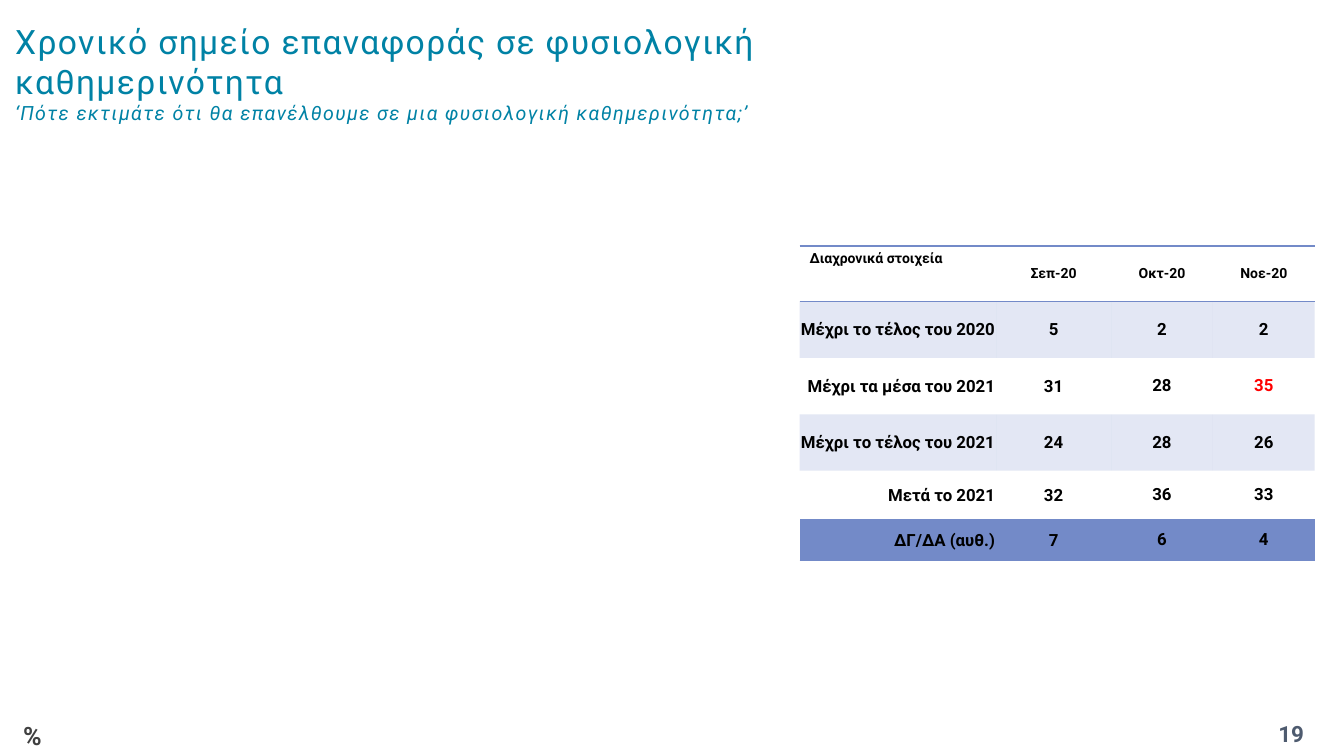
from lxml.etree import SubElement
from pptx import Presentation
from pptx.dml.color import RGBColor
from pptx.enum.dml import MSO_PATTERN
from pptx.enum.text import MSO_ANCHOR, PP_ALIGN
from pptx.oxml.ns import qn
from pptx.util import Inches, Pt

FONT = "Roboto"
TEAL = "0082A5"
SLATE = "4E5B6F"
BLUE = "738AC8"
BLACK = "000000"
RED = "FF0000"
NO_STYLE = "{2D5ABB26-0587-4C30-8999-92F81FD0307C}"

MONTHS = ["Διαχρονικά στοιχεία", "Σεπ-20", "Οκτ-20", "Νοε-20"]
ANSWERS = [
    ("Μέχρι το τέλος του 2020", 5, 2, 2),
    ("Μέχρι τα μέσα του 2021", 31, 28, 35),
    ("Μέχρι το τέλος του 2021", 24, 28, 26),
    ("Μετά το 2021", 32, 36, 33),
    ("ΔΓ/ΔΑ (αυθ.)", 7, 6, 4),
]
COLUMN_WIDTHS = [1.95, 1.14, 1.01, 1.01]
ROW_HEIGHTS = [0.55, 0.56, 0.56, 0.56, 0.48, 0.41]
HIGHLIGHT = (2, 3)


def rgb(value):
    return RGBColor.from_string(value)


class SlideBuilder:
    def __init__(self, page):
        self.page = page

    def span(self, para, text, size, color=None, spacing=None, **formats):
        span = para.add_run()
        span.text = text
        for name, value in {"name": FONT, "size": Pt(size), **formats}.items():
            setattr(span.font, name, value)
        if color:
            span.font.color.rgb = rgb(color)
        if spacing:
            span.font._element.set("spc", str(spacing))
        return span

    def title(self, heading, question):
        box = self.page.shapes.title
        place = {"left": 0.05, "top": 0.13, "width": 10.08, "height": 1.18}
        for name, value in place.items():
            setattr(box, name, Inches(value))
        frame = box.text_frame
        frame.word_wrap = True
        frame.vertical_anchor = MSO_ANCHOR.MIDDLE
        para = frame.paragraphs[0]
        para.alignment = PP_ALIGN.LEFT
        self.span(para, heading, 24, TEAL, spacing=100)
        para.add_line_break()
        self.span(para, question, 14, TEAL, spacing=100, italic=True)

    def label(self, text, left, width, size, color=None, align=PP_ALIGN.LEFT):
        box = self.page.shapes.add_textbox(
            Inches(left), Inches(7.1), Inches(width), Inches(0.4))
        box.text_frame.word_wrap = True
        para = box.text_frame.paragraphs[0]
        para.alignment = align
        return self.span(para, text, size, color, bold=True)

    def hatch(self, span, fore, back):
        fill = span.font.fill
        fill.patterned()
        fill.pattern = MSO_PATTERN.DARK_UPWARD_DIAGONAL
        fill.fore_color.rgb = rgb(fore)
        fill.back_color.rgb = rgb(back)

    def border(self, cell, side):
        line = SubElement(cell._tc.get_or_add_tcPr(), qn(f"a:{side}"), w=str(Pt(1)))
        fill = SubElement(line, qn("a:solidFill"))
        SubElement(fill, qn("a:srgbClr"), val=BLUE)

    def band(self, cell):
        """Fill the cell with the translucent band colour."""
        cell.fill.solid()
        cell.fill.fore_color.rgb = rgb(BLUE)
        color = cell._tc.tcPr.find(f".//{qn('a:solidFill')}/{qn('a:srgbClr')}")
        SubElement(color, qn("a:alpha"), val="20000")

    def cell(self, cell, text, row, column):
        header = row == 0
        corner = header and column == 0
        cell.vertical_anchor = MSO_ANCHOR.TOP if corner else MSO_ANCHOR.MIDDLE
        if not header and column < 2:
            margins = {"left": 0.01, "right": 0.01, "top": 0.01, "bottom": 0}
            for side, value in margins.items():
                setattr(cell, f"margin_{side}", Inches(value))
        para = cell.text_frame.paragraphs[0]
        if corner:
            para.alignment = PP_ALIGN.LEFT
        else:
            para.alignment = PP_ALIGN.CENTER if column else PP_ALIGN.RIGHT
        color = RED if (row, column) == HIGHLIGHT else BLACK
        self.span(para, str(text), 10 if header else 12, color, bold=True)
        if row % 2:
            self.band(cell)
        else:
            cell.fill.background()

    def table(self, rows, left, top):
        frame = self.page.shapes.add_table(
            len(rows), len(COLUMN_WIDTHS), Inches(left), Inches(top),
            Inches(sum(COLUMN_WIDTHS)), Inches(sum(ROW_HEIGHTS)))
        table = frame.table
        table.first_row = True
        table.horz_banding = False
        table._tbl.tblPr.find(qn("a:tableStyleId")).text = NO_STYLE
        for column, width in zip(table.columns, COLUMN_WIDTHS):
            column.width = Inches(width)
        for row, height in zip(table.rows, ROW_HEIGHTS):
            row.height = Inches(height)
        edges = {0: ["lnT", "lnB"], len(rows) - 1: ["lnB"]}
        for row, values in enumerate(rows):
            for column, value in enumerate(values):
                cell = table.cell(row, column)
                for side in edges.get(row, []):
                    self.border(cell, side)
                self.cell(cell, value, row, column)


def main():
    deck = Presentation()
    deck.slide_width = Inches(13.33)
    deck.slide_height = Inches(7.5)
    builder = SlideBuilder(deck.slides.add_slide(deck.slide_layouts[5]))
    builder.title(
        "Χρονικό σημείο επαναφοράς σε φυσιολογική καθημερινότητα",
        "‘Πότε εκτιμάτε ότι θα επανέλθουμε σε μια φυσιολογική καθημερινότητα;’")
    builder.label("19", 12.28, 1.05, 16, SLATE, PP_ALIGN.CENTER)
    percent = builder.label("%", 0.13, 0.71, 18)
    builder.hatch(percent, "808080", "404040")
    builder.table([MONTHS, *ANSWERS], 7.93, 2.44)
    deck.save("out.pptx")


if __name__ == "__main__":
    main()
